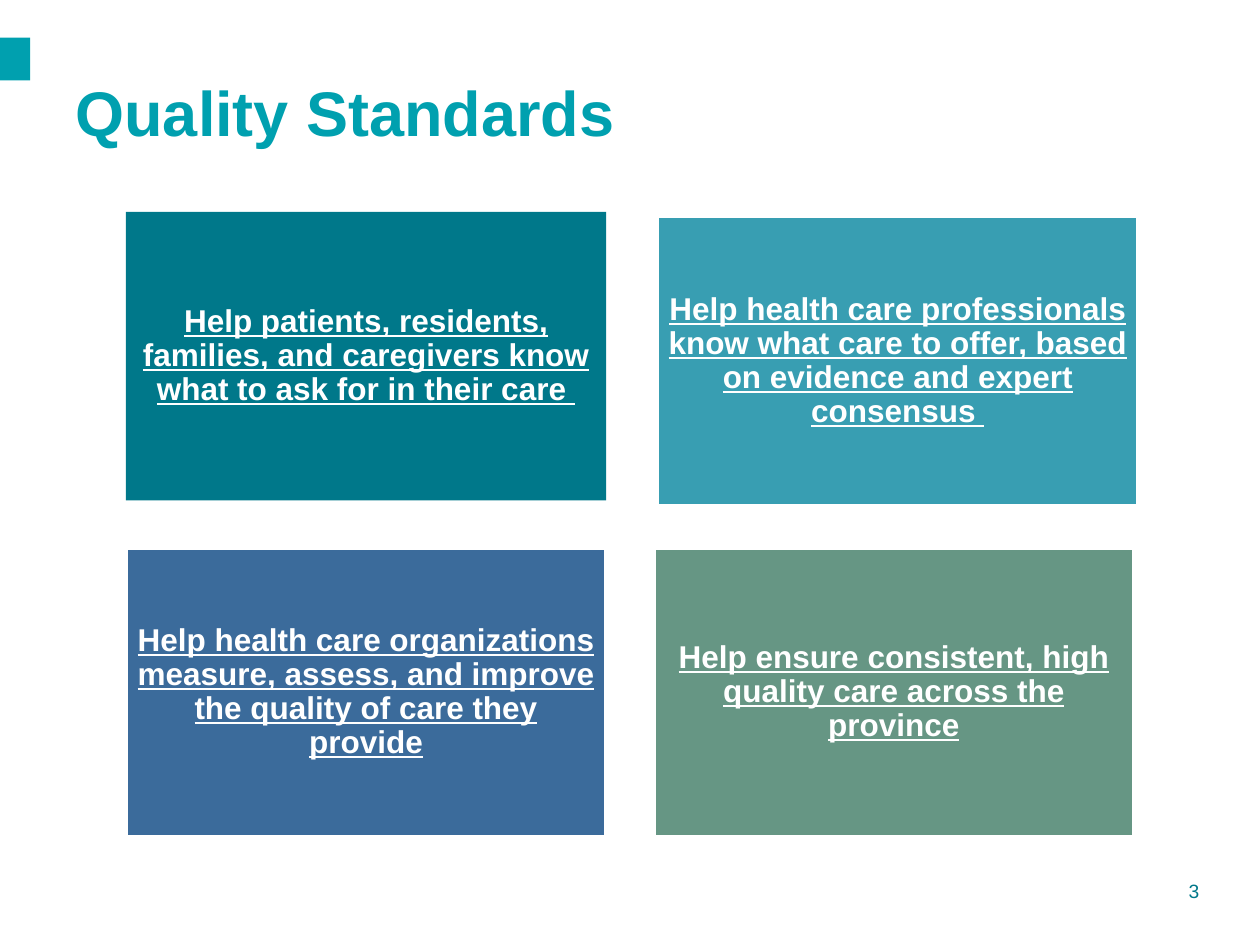
from pptx import Presentation
from pptx.dml.color import RGBColor
from pptx.enum.shapes import MSO_SHAPE as Shape
from pptx.enum.text import MSO_ANCHOR as Anchor, PP_ALIGN as Align
from pptx.util import Cm, Pt

COLORS = {
    "accent": "00A0AF",
    "teal": "00788A",
    "aqua": "389EB2",
    "blue": "3B6B9B",
    "green": "669684",
    "white": "FFFFFF",
}
FONT = "Arial"
CARD_SIZE = (9.68, 5.82)

# Left, top, fill, outlined, bold text, plain ending
CARDS = [
    (2.54, 4.27, "teal", False,
     "Help patients, residents, families, and caregivers know what to ask for in their care ", ""),
    (13.26, 4.37, "aqua", True,
     "Help health care professionals know what care to offer, "
     "based on evidence and expert consensus", " "),
    (2.54, 11.05, "blue", True,
     "Help health care organizations measure, assess, and improve "
     "the quality of care they provide", ""),
    (13.18, 11.05, "green", True,
     "Help ensure consistent, high quality care across the province", ""),
]


def color(name):
    return RGBColor.from_string(COLORS[name])


def style_font(font, size, name, bold=False):
    font.name = FONT
    font.size = Pt(size)
    font.bold = bold
    font.color.rgb = color(name)


def add_block(page, box, fill):
    block = page.shapes.add_shape(Shape.RECTANGLE, *map(Cm, box))
    block.shadow.inherit = False
    block.fill.solid()
    block.fill.fore_color.rgb = color(fill)
    block.line.fill.background()
    return block


def add_heading(page, box):
    left, top, width, height = box
    # Accent tab at the slide edge, above the title
    add_block(page, (left - 1.27, top - 0.51, 0.61, 0.86), "accent")
    title = page.shapes.title
    title.left, title.top, title.width, title.height = map(Cm, box)
    frame = title.text_frame
    frame.text = "Quality Standards"
    frame.vertical_anchor = Anchor.MIDDLE
    para = frame.paragraphs[0]
    para.alignment = Align.LEFT
    style_font(para.font, 36, "accent", bold=True)


def add_card(page, box, fill, outlined, text, ending):
    card = add_block(page, box, fill)
    if outlined:
        card.line.color.rgb = color("white")
        card.line.width = Pt(2)
    frame = card.text_frame
    frame.word_wrap = True
    frame.vertical_anchor = Anchor.MIDDLE
    frame.margin_left = frame.margin_right = Cm(0.18)
    frame.margin_top = frame.margin_bottom = Cm(0.18)
    para = frame.paragraphs[0]
    para.alignment = Align.CENTER
    para.line_spacing = 0.9
    style_font(para.font, 18, "white", bold=True)
    para.font.underline = True
    para.add_run().text = text
    if ending:
        span = para.add_run()
        span.text = ending
        span.font.bold = False


def add_page_number(page, box, number):
    frame = page.shapes.add_textbox(*map(Cm, box)).text_frame
    frame.word_wrap = True
    para = frame.paragraphs[0]
    para.text = str(number)
    para.alignment = Align.RIGHT
    style_font(para.font, 11, "teal")


def main():
    deck = Presentation()
    deck.slide_width, deck.slide_height = Cm(25.4), Cm(19.05)
    page = deck.slides.add_slide(deck.slide_layouts[5])

    add_heading(page, (1.27, 1.27, 19.84, 1.96))
    for left, top, *content in CARDS:
        add_card(page, (left, top, *CARD_SIZE), *content)
    add_page_number(page, (21.46, 17.6, 2.97, 0.74), 3)

    deck.save("out.pptx")


if __name__ == "__main__":
    main()
